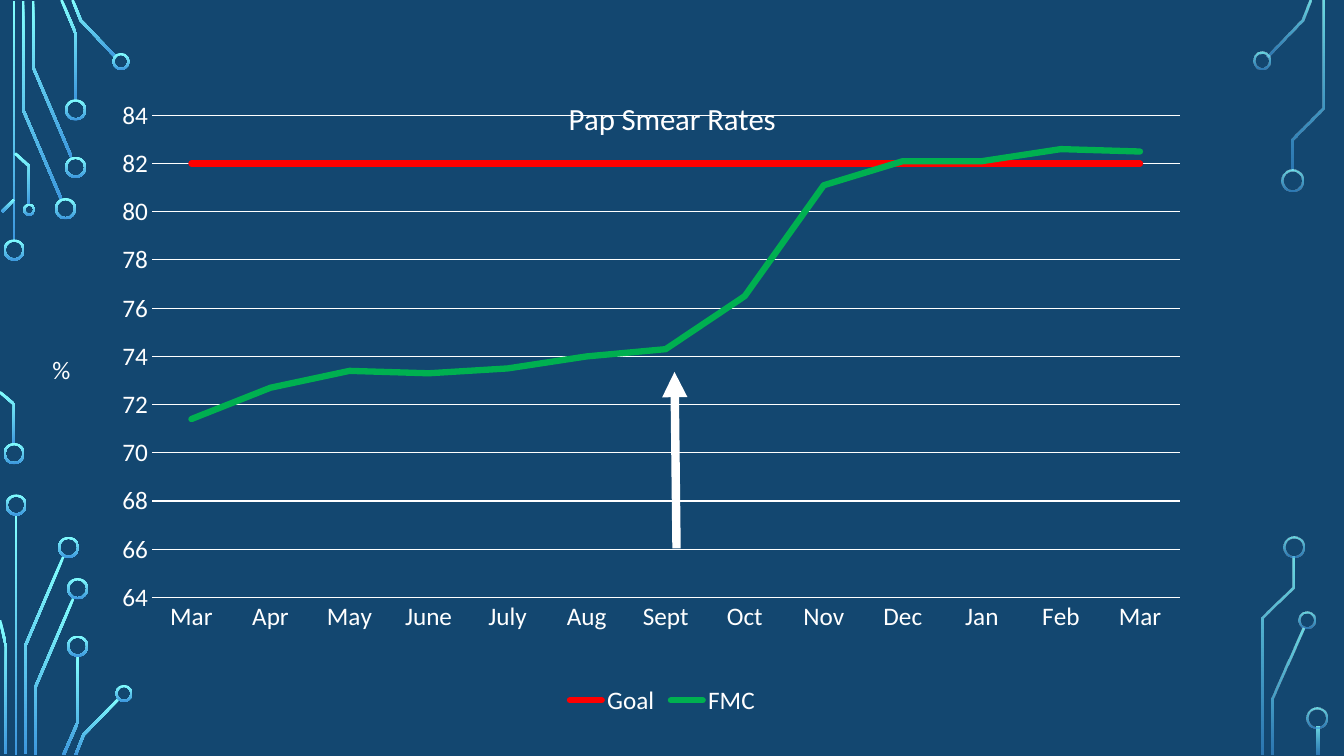
import math
import pptx
import pptx.chart.data
import pptx.dml.color
import pptx.enum.chart
import pptx.enum.shapes
import pptx.enum.text
import pptx.oxml
import pptx.oxml.ns
import pptx.util

RGB = pptx.dml.color.RGBColor
NAVY = RGB(0x13, 0x47, 0x70)
WHITE = RGB(0xFF, 0xFF, 0xFF)
RED = RGB(0xFF, 0x00, 0x00)
GREEN = RGB(0x00, 0xB0, 0x50)
AQUA = RGB(0x82, 0xFF, 0xFF)
BLUE = RGB(0x3D, 0x97, 0xDE)
FONT = "Calibri"
PX = 9144  # 100 px to the inch
BAND = 2.5  # width of a circuit trace in px
RIM = 2  # width of a ring's rim in px

# Chart content
TITLE = "Pap Smear Rates"
MONTHS = ["Mar", "Apr", "May", "June", "July", "Aug", "Sept",
          "Oct", "Nov", "Dec", "Jan", "Feb", "Mar"]
RATES = [71.4, 72.7, 73.4, 73.3, 73.5, 74, 74.3, 76.5, 81.1, 82.1, 82.1, 82.6, 82.5]
SERIES = [("Goal", [82] * len(MONTHS), RED), ("FMC", RATES, GREEN)]

# Circuit art: centre lines of traces; rings as centre x, centre y, size
LEFT = {
    "traces": [
        [(14, 1), (14, 240)],
        [(23, 1), (23, 109), (61, 198)],
        [(33, 1), (33, 67), (71, 156)],
        [(61, 0), (75, 33), (75, 100)],
        [(72, 0), (80, 20), (115, 57)],
        [(2, 210), (14, 198)],
        [(0, 389), (14, 401), (14, 441)],
        [(15, 152), (29, 165), (29, 203)],
        [(16, 510), (16, 749)],
        [(25, 748), (25, 641), (63, 552)],
        [(0, 615), (6, 641), (6, 748)],
        [(35, 749), (35, 682), (73, 593)],
        [(77, 650), (77, 717), (63, 749)],
        [(75, 749), (83, 729), (118, 693)],
    ],
    "rings": [(14, 248, 21), (14, 450, 21), (65, 207, 21), (75, 166, 21),
              (75, 109, 21), (120, 61, 17), (29, 208, 12), (16, 501, 21),
              (68, 543, 21), (77, 584, 21), (77, 641, 21), (123, 688, 17)],
    "alpha": (100, 100),
}
RIGHT = {
    "traces": [
        [(1300, 0), (1292, 20), (1257, 56)],
        [(1262, 749), (1262, 693), (1293, 623)],
        [(1312, 1), (1312, 107), (1282, 138), (1282, 169)],
        [(1283, 552), (1283, 583), (1252, 613), (1252, 749)],
        [(1307, 721), (1307, 749)],
    ],
    "rings": [(1252, 60, 17), (1282, 179, 21), (1296, 615, 17),
              (1283, 543, 21), (1306, 712, 21)],
    "alpha": (80, 60),
}


def px(*nums):
    return [round(num * PX) for num in nums]


def node(tag, **attrs):
    item = pptx.oxml.parse_xml(f"<{tag} {pptx.oxml.ns.nsdecls(tag.split(':')[0])}/>")
    for key, val in attrs.items():
        item.set(key, str(val))
    return item


def style(font, size):
    font.size = pptx.util.Pt(size)
    font.name = FONT
    font.bold = False
    font.color.rgb = WHITE


def glow(shape, alpha):
    """Fill with the vertical circuit gradient."""
    shape.shadow.inherit = False
    shape.line.fill.background()
    shape.fill.gradient()
    shape.fill.gradient_angle = 270
    for stop, tint in zip(shape.fill.gradient_stops, (AQUA, BLUE)):
        stop.color.rgb = tint
    if min(alpha) < 100:
        tints = list(shape._element.spPr.iter(pptx.oxml.ns.qn("a:srgbClr")))
        for tint, part in zip(tints, alpha):
            tint.append(node("a:alpha", val=part * 1000))


def outline(line):
    """Both edges of a mitred band around a centre line."""
    norms = []
    for (ax, ay), (bx, by) in zip(line, line[1:]):
        size = math.hypot(bx - ax, by - ay)
        norms.append(((ay - by) / size, (bx - ax) / size))
    near, far = [], []
    for (x, y), (ux, uy), (vx, vy) in zip(line, norms[:1] + norms, norms + norms[-1:]):
        reach = BAND / 2 / (1 + ux * vx + uy * vy)
        dx, dy = reach * (ux + vx), reach * (uy + vy)
        near.append(px(x + dx, y + dy))
        far.append(px(x - dx, y - dy))
    return near + far[::-1]


def draw(shapes, side):
    for line in side["traces"]:
        start, *rest = outline(line)
        path = shapes.build_freeform(*start, scale=1)
        path.add_line_segments(rest, close=True)
        glow(path.convert_to_shape(), side["alpha"])
    for x, y, size in side["rings"]:
        ring = shapes.add_shape(pptx.enum.shapes.MSO_SHAPE.DONUT,
                                *px(x - size / 2, y - size / 2, size, size))
        ring.adjustments[0] = RIM / size
        glow(ring, side["alpha"])


def place(part, index, **spots):
    """Give a chart part a manual layout."""
    lay = part.find(pptx.oxml.ns.qn("c:layout"))
    if lay is None:
        lay = node("c:layout")
        part.insert(index, lay)
    man = node("c:manualLayout")
    lay.append(man)
    for key, val in spots.items():
        man.append(node("c:" + key, val=val))


def plot(shapes):
    data = pptx.chart.data.CategoryChartData()
    data.categories = MONTHS
    for name, vals, _ in SERIES:
        data.add_series(name, vals)
    enum = pptx.enum.chart
    chart = shapes.add_chart(enum.XL_CHART_TYPE.LINE, *px(109, 58, 1096, 657), data).chart
    style(chart.font, 18)

    # Title and plot area
    chart.has_title = True
    run = chart.chart_title.text_frame.paragraphs[0].add_run()
    run.text = TITLE
    style(run.font, 22)
    place(chart.chart_title._element, 1, xMode="edge", yMode="edge", x=0.41, y=0.05)
    place(chart._chartSpace.chart.plotArea, 0, layoutTarget="inner", xMode="edge",
          yMode="edge", x=0.038, y=0.086, w=0.93, h=0.728)

    # Legend and axes
    chart.has_legend = True
    chart.legend.position = enum.XL_LEGEND_POSITION.BOTTOM
    chart.legend.include_in_layout = False
    style(chart.legend.font, 18)
    cat, val = chart.category_axis, chart.value_axis
    for axis in (cat, val):
        axis.major_tick_mark = axis.minor_tick_mark = enum.XL_TICK_MARK.NONE
        style(axis.tick_labels.font, 18)
    val.minimum_scale, val.maximum_scale, val.major_unit = 64, 84, 2
    val.tick_labels.number_format = "0"
    val.tick_labels.number_format_is_linked = False
    val.has_major_gridlines = True
    val.format.line.fill.background()
    for line in (cat.format.line, val.major_gridlines.format.line):
        line.color.rgb = WHITE
        line.width = pptx.util.Pt(0.75)

    # Series
    chart.plots[0].vary_by_categories = False
    for row, (_, _, tint) in zip(chart.plots[0].series, SERIES):
        row.smooth = False
        row.marker.style = enum.XL_MARKER_STYLE.NONE
        row.format.line.color.rgb = tint
        row.format.line.width = pptx.util.Pt(4.5)
        edge = row.format.line._get_or_add_ln()
        edge.set("cap", "rnd")
        edge.append(node("a:round"))


def main():
    deck = pptx.Presentation()
    deck.slide_width, deck.slide_height = px(1333, 750)
    slide = deck.slides.add_slide(deck.slide_layouts[6])
    slide.background.fill.solid()
    slide.background.fill.fore_color.rgb = NAVY
    shapes = slide.shapes
    for side in (LEFT, RIGHT):
        draw(shapes, side)
    plot(shapes)

    # Unit label
    frame = shapes.add_textbox(*px(42, 347, 51, 40)).text_frame
    frame.word_wrap = True
    frame.auto_size = pptx.enum.text.MSO_AUTO_SIZE.SHAPE_TO_FIT_TEXT
    run = frame.paragraphs[0].add_run()
    run.text = "%"
    style(run.font, 18)

    # Arrow to September
    arrow = shapes.add_connector(pptx.enum.shapes.MSO_CONNECTOR.STRAIGHT,
                                 *px(671, 544, 669, 369))
    arrow.line.color.rgb = WHITE
    arrow.line.width = pptx.util.Pt(6)
    arrow.line._get_or_add_ln().append(node("a:tailEnd", type="triangle"))
    arrow._element.spPr.append(node("a:effectLst"))
    deck.save("out.pptx")


if __name__ == "__main__":
    main()
